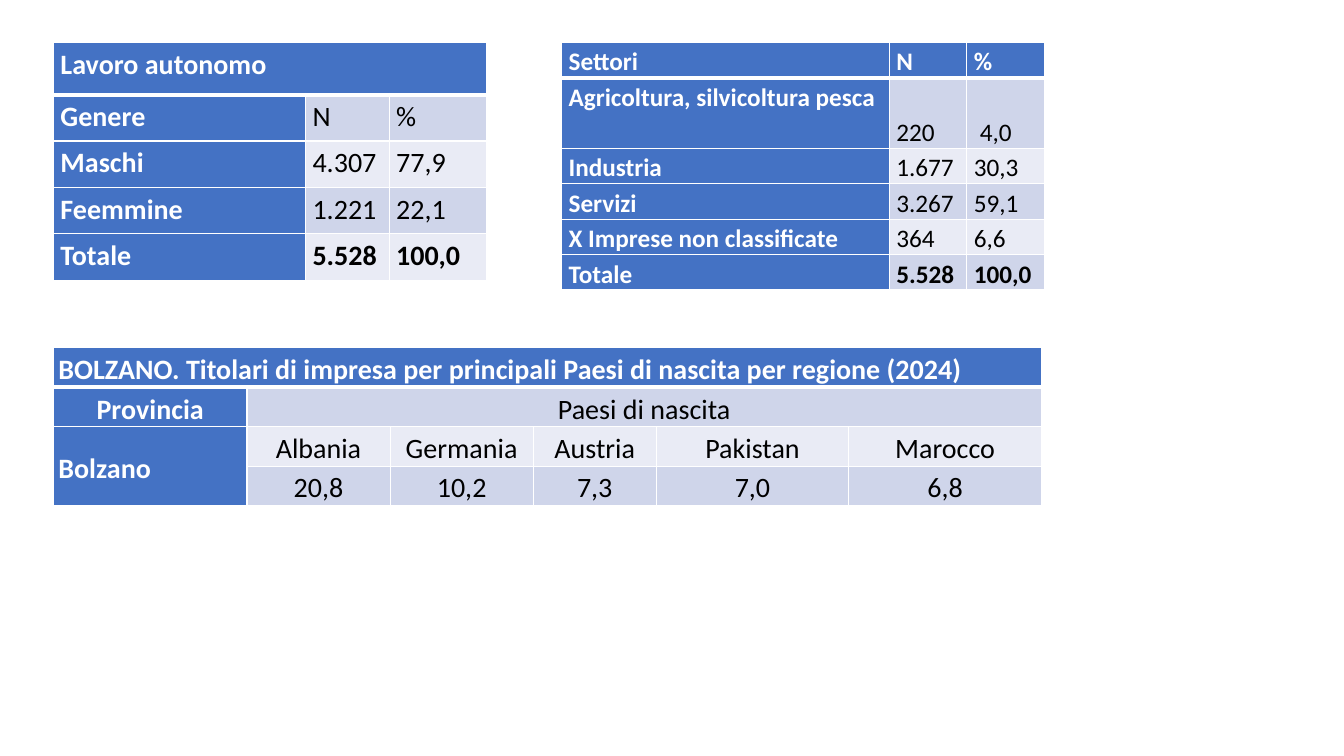
from dataclasses import dataclass

from lxml import etree
from pptx import Presentation
from pptx import util as u
from pptx.dml import color
from pptx.enum import text
from pptx.oxml import ns

PX = 9144  # EMU in one px, at 100 px to the inch


@dataclass(frozen=True)
class Theme:
    font: str = "Calibri"
    large: int = 20
    medium: int = 18
    header: str = "4472C4"
    bands: tuple = ("E9EBF5", "CFD5EA")
    light: str = "FFFFFF"
    dark: str = "000000"
    thin: int = 1
    thick: int = 3


def write_text(cell, content, *, font, size, ink, bold, align, indent=0):
    """Write one formatted paragraph into a cell."""
    paragraph = cell.text_frame.paragraphs[0]
    paragraph.alignment = align
    paragraph.line_spacing = 1.15
    paragraph.space_after = u.Pt(8)
    if indent:
        paragraph._p.get_or_add_pPr().set("marL", str(indent * PX))
    run = paragraph.add_run()
    run.text = content
    run.font.name, run.font.size, run.font.bold = font, u.Pt(size), bold
    run.font.color.rgb = color.RGBColor.from_string(ink)


class SlideBuilder:
    def __init__(self, slide, theme):
        self.slide = slide
        self.theme = theme

    def borders(self, cell, row):
        """Draw white cell borders, with a thick rule under the header row."""
        theme = self.theme
        widths = {
            "lnL": theme.thin,
            "lnR": theme.thin,
            "lnT": theme.thick if row == 1 else theme.thin,
            "lnB": theme.thick if row == 0 else theme.thin,
        }
        properties = cell._tc.get_or_add_tcPr()
        for side, width in widths.items():
            line = etree.SubElement(properties, ns.qn(f"a:{side}"), w=str(u.Pt(width)))
            fill = etree.SubElement(line, ns.qn("a:solidFill"))
            etree.SubElement(fill, ns.qn("a:srgbClr"), val=theme.light)

    def table(self, left, top, columns, heights, rows, *, size, margin=7,
              merges=(), anchors=None, centred=(), indents=None,
              anchor=text.MSO_ANCHOR.TOP):
        """Add a table; None in rows marks a cell covered by a merge."""
        theme = self.theme
        frame = self.slide.shapes.add_table(
            len(rows), len(columns), left * PX, top * PX,
            sum(columns) * PX, sum(heights) * PX)
        table = frame.table
        table.horz_banding = False
        for column, width in zip(table.columns, columns):
            column.width = width * PX
        for row, height in zip(table.rows, heights):
            row.height = height * PX
        for first, last in merges:
            table.cell(*first).merge(table.cell(*last))

        for r, values in enumerate(rows):
            for c, value in enumerate(values):
                cell = table.cell(r, c)
                heading = r == 0 or c == 0
                self.borders(cell, r)
                cell.fill.solid()
                cell.fill.fore_color.rgb = color.RGBColor.from_string(
                    theme.header if heading else theme.bands[r % 2])
                cell.margin_left = cell.margin_right = margin * PX
                cell.margin_top = cell.margin_bottom = 0
                cell.vertical_anchor = (anchors or {}).get((r, c), anchor)
                if value is None:
                    continue
                write_text(
                    cell, value, font=theme.font, size=size,
                    ink=theme.light if heading else theme.dark,
                    bold=heading or values[0] == "Totale",
                    align=(text.PP_ALIGN.CENTER if (r, c) in centred
                           else text.PP_ALIGN.LEFT),
                    indent=(indents or {}).get((r, c), 0))


def main():
    presentation = Presentation()
    presentation.slide_width = 1333 * PX
    presentation.slide_height = 750 * PX
    slide = presentation.slides.add_slide(presentation.slide_layouts[6])
    theme = Theme()
    builder = SlideBuilder(slide, theme)

    # Self-employment by gender
    builder.table(
        53, 42, [250, 83, 97], [52] + [46] * 4,
        [
            ["Lavoro autonomo", None, None],
            ["Genere", "N", "%"],
            ["Maschi", "4.307", "77,9"],
            ["Feemmine", "1.221", "22,1"],
            ["Totale", "5.528", "100,0"],
        ],
        size=theme.large, merges=[((0, 0), (0, 2))])

    # Self-employment by sector
    bottom = text.MSO_ANCHOR.BOTTOM
    builder.table(
        557, 42, [325, 77, 77], [35, 70] + [35] * 4,
        [
            ["Settori", "N", "%"],
            ["Agricoltura, silvicoltura pesca", "220", "4,0"],
            ["Industria", "1.677", "30,3"],
            ["Servizi", "3.267", "59,1"],
            ["X Imprese non classificate", "364", "6,6"],
            ["Totale", "5.528", "100,0"],
        ],
        size=theme.medium, anchors={(1, 1): bottom, (1, 2): bottom},
        indents={(1, 2): 6})

    # Business owners by country of birth
    builder.table(
        53, 345, [192, 142, 142, 122, 191, 191], [39] * 4,
        [
            ["BOLZANO. Titolari di impresa per principali Paesi di nascita "
             "per regione (2024)"] + [None] * 5,
            ["Provincia", "Paesi di nascita"] + [None] * 4,
            ["Bolzano", "Albania", "Germania", "Austria", "Pakistan", "Marocco"],
            [None, "20,8", "10,2", "7,3", "7,0", "6,8"],
        ],
        size=theme.large, margin=5, anchor=text.MSO_ANCHOR.MIDDLE,
        anchors={(0, 0): bottom, (1, 1): bottom},
        merges=[((0, 0), (0, 5)), ((1, 1), (1, 5)), ((2, 0), (3, 0))],
        centred={(1, 0)} | {(r, c) for r in range(1, 4) for c in range(1, 6)})

    presentation.save("out.pptx")


if __name__ == "__main__":
    main()
